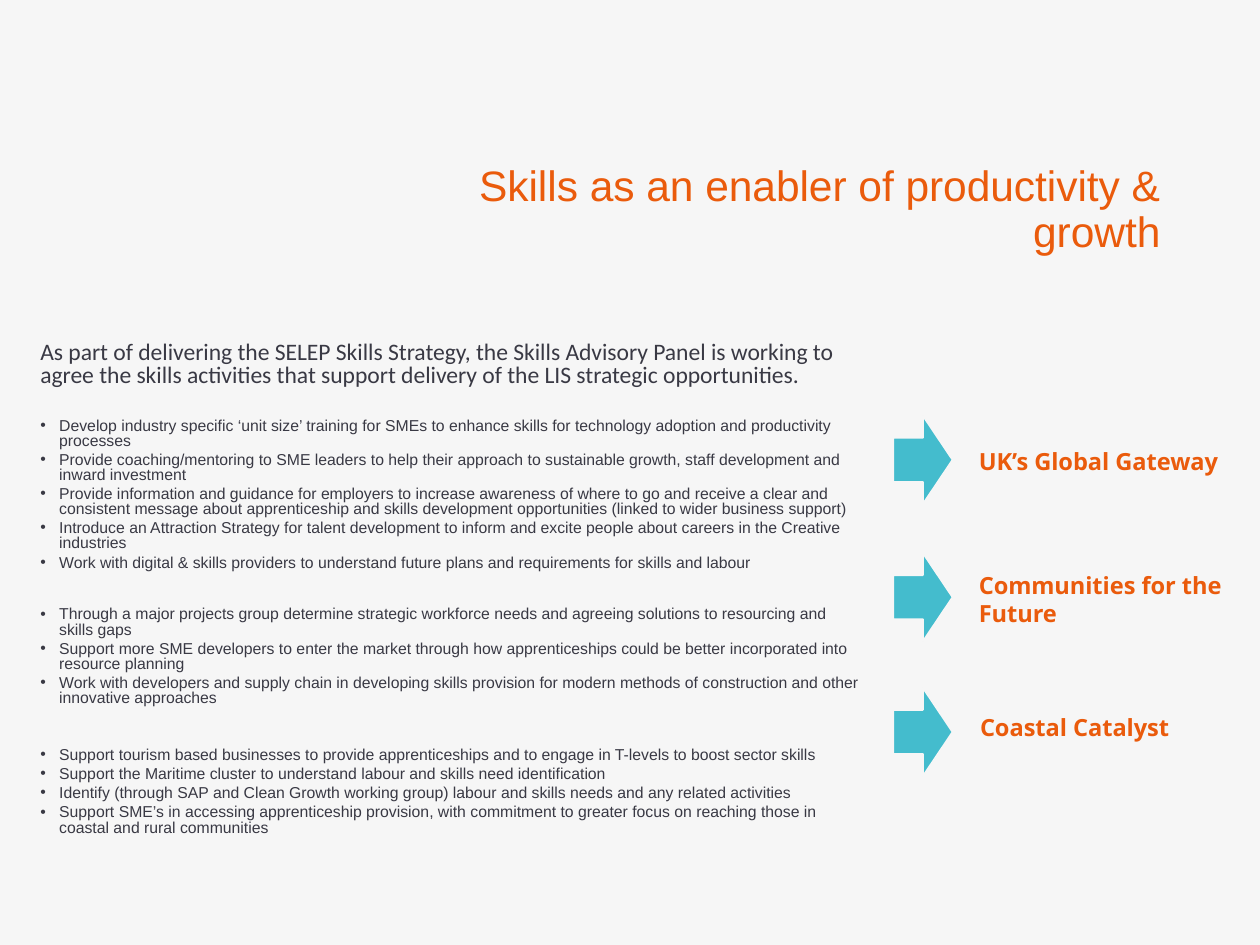
from pptx import Presentation
from pptx.dml.color import RGBColor as RGB
from pptx.enum.shapes import MSO_SHAPE as Shape
from pptx.enum.text import MSO_ANCHOR as Anchor, MSO_AUTO_SIZE as Fit, PP_ALIGN as Align
from pptx.oxml.ns import qn
from pptx.util import Inches, Pt
from lxml import etree

INK = {"back": "F6F6F6", "dark": "393944", "warm": "EA5B0C", "teal": "44BCCD"}

deck = Presentation()
deck.slide_width, deck.slide_height = Inches(10), Inches(7.5)
slide = deck.slides.add_slide(deck.slide_layouts[1])
slide.background.fill.solid()
slide.background.fill.fore_color.rgb = RGB.from_string(INK["back"])


def write(para, text, size, color, font="Arial", bold=False, align=Align.LEFT,
          lead=1.0, before=0, dot=False):
    props = para._p.get_or_add_pPr()
    indent = Inches(0.15) if dot else 0
    props.set("marL", str(indent))
    props.set("indent", str(-indent))
    if dot:
        etree.SubElement(props, qn("a:buChar")).set("char", "•")
    else:
        etree.SubElement(props, qn("a:buNone"))
    para.alignment, para.line_spacing = align, lead
    para.space_before = Pt(before)
    run = para.add_run()
    run.text = text
    run.font.name, run.font.size, run.font.bold = font, Pt(size), bold
    run.font.color.rgb = RGB.from_string(INK[color])


def place(shape, left, top, width, height):
    shape.left, shape.top = Inches(left), Inches(top)
    shape.width, shape.height = Inches(width), Inches(height)
    shape.text_frame.word_wrap = True
    shape.text_frame.auto_size = Fit.NONE
    return shape.text_frame


# Title
frame = place(slide.shapes.title, 2.82, 1.4, 6.49, 0.55)
frame.vertical_anchor = Anchor.MIDDLE
write(frame.paragraphs[0], "Skills as an enabler of productivity & growth",
      24.3, "warm", align=Align.RIGHT, lead=0.9)

# Introduction and three groups of actions
body = place(slide.placeholders[1], 0.22, 2.67, 6.74, 4.01)
body.vertical_anchor = Anchor.TOP
write(body.paragraphs[0],
      "As part of delivering the SELEP Skills Strategy, the Skills Advisory Panel is "
      "working to agree the skills activities that support delivery of the LIS "
      "strategic opportunities.", 13.5, "dark", font="Calibri", lead=0.8)

groups = [
    (17.7, [
        "Develop industry specific ‘unit size’ training for SMEs to enhance skills for technology adoption and productivity processes",
        "Provide coaching/mentoring to SME leaders to help their approach to sustainable growth, staff development and inward investment",
        "Provide information and guidance for employers to increase awareness of where to go and receive a clear and consistent message about apprenticeship and skills development opportunities (linked to wider business support)",
        "Introduce an Attraction Strategy for talent development to inform and excite people about careers in the Creative industries",
        "Work with digital & skills providers to understand future plans and requirements for skills and labour",
    ]),
    (21, [
        "Through a major projects group determine strategic workforce needs and agreeing solutions to resourcing and skills gaps",
        "Support more SME developers to enter the market through how apprenticeships could be better incorporated into resource planning",
        "Work with developers and supply chain in developing skills provision for modern methods of construction and other innovative approaches",
    ]),
    (24, [
        "Support tourism based businesses to provide apprenticeships and to engage in T-levels to boost sector skills",
        "Support the Maritime cluster to understand labour and skills need identification",
        "Identify (through SAP and Clean Growth working group) labour and skills needs and any related activities",
        "Support SME’s in accessing apprenticeship provision, with commitment to greater focus on reaching those in coastal and rural communities",
    ]),
]
for gap, items in groups:
    for i, item in enumerate(items):
        write(body.add_paragraph(), item, 9, "dark", lead=0.8,
              before=2.2 if i else gap, dot=True)

# Arrows to the strategic opportunities
goals = [
    ("UK’s Global Gateway", 3.3, 7.67, 3.5, 0.33),
    ("Communities for the Future", 4.39, 7.67, 4.48, 0.56),
    ("Coastal Catalyst", 5.46, 7.68, 5.61, 0.33),
]
for text, tip, left, top, height in goals:
    arrow = slide.shapes.add_shape(Shape.RIGHT_ARROW, Inches(7.09), Inches(tip),
                                   Inches(0.47), Inches(0.7))
    arrow.shadow.inherit = False
    arrow.fill.solid()
    arrow.fill.fore_color.rgb = RGB.from_string(INK["teal"])
    arrow.line.color.rgb = RGB.from_string(INK["back"])
    arrow.line.width = Pt(1)
    label = place(slide.shapes.add_textbox(0, 0, 0, 0), left, top, 2.33, height)
    write(label.paragraphs[0], text, 13.5, "warm", font="Open Sans", bold=True)

deck.save("out.pptx")
